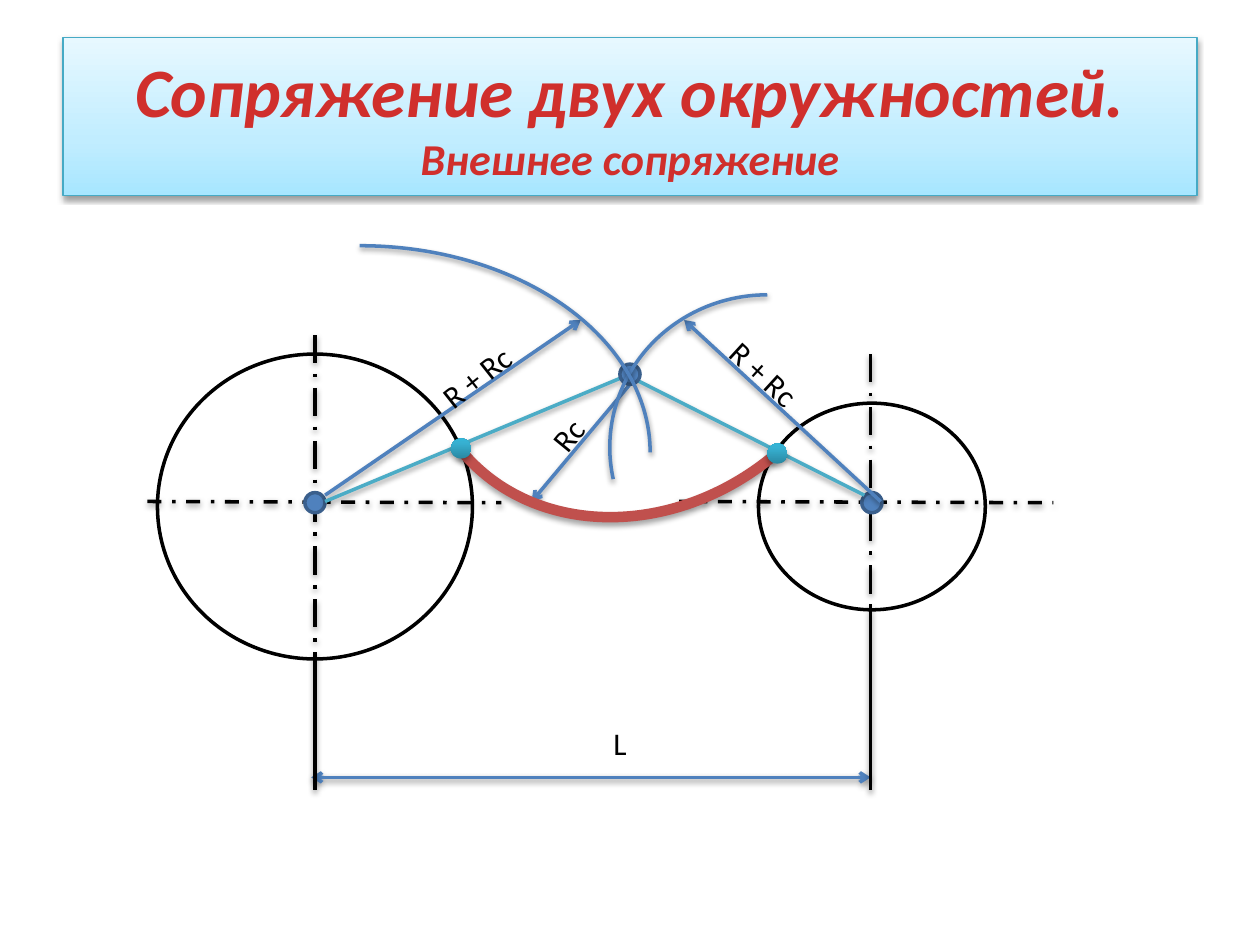
from lxml.etree import SubElement
from pptx import Presentation
from pptx.dml.color import RGBColor as RGB
from pptx.enum.dml import MSO_LINE as Dash
from pptx.enum.shapes import MSO_CONNECTOR as Link, MSO_SHAPE as Kind
from pptx.enum.text import MSO_ANCHOR as Anchor, PP_ALIGN as Align
from pptx.oxml.ns import qn
from pptx.util import Pt

PX = 9144  # 100 px to the inch


class Theme:
    font = "Calibri"
    head, sub, label = 39.6, 25.2, 18
    thin, line, bold = 0.75, 2, 6
    ink, paper, red = "000000", "FFFFFF", "D02F2C"
    blue, navy, teal, brick, edge = "4F81BD", "3A5F8C", "4BACC6", "C0504D", "46AAC5"
    sky = ((0, "A7E6FF"), (35, "C1EDFF"), (100, "E7F8FF"))
    sea = ((0, "2A88A2"), (80, "37B1D2"), (100, "34B4D6"))


def shade(shape, alpha=38, dist=20000):
    """Give the shape a soft shadow straight below it."""
    props = shape.element.spPr
    for old in props.findall(qn("a:effectLst")):
        props.remove(old)
    glow = SubElement(SubElement(props, qn("a:effectLst")), qn("a:outerShdw"),
                      blurRad="40000", dist=str(dist), dir="5400000", rotWithShape="0")
    tone = SubElement(glow, qn("a:srgbClr"), val=Theme.ink)
    SubElement(tone, qn("a:alpha"), val=str(alpha * 1000))


def join(rows):
    """Draw rows of (x1, y1, x2, y2, colour, dash, arrow ends)."""
    for x1, y1, x2, y2, tint, dash, ends in rows:
        link = slide.shapes.add_connector(Link.STRAIGHT, x1 * PX, y1 * PX, x2 * PX, y2 * PX)
        link.line.color.rgb = RGB.from_string(tint)
        link.line.width = Pt(Theme.line)
        if dash:
            link.line.dash_style = dash
        for end in ends:
            SubElement(link.line._get_or_add_ln(), qn("a:" + end), type="arrow")
        shade(link)


deck = Presentation()
deck.slide_width, deck.slide_height = 1000 * PX, 750 * PX
slide = deck.slides.add_slide(deck.slide_layouts[6])

# Title
title = slide.shapes.add_shape(Kind.RECTANGLE, 50 * PX, 30 * PX, 900 * PX, 125 * PX)
title.line.color.rgb = RGB.from_string(Theme.edge)
title.line.width = Pt(Theme.thin)
shade(title)
frame = title.text_frame
frame.word_wrap = True
frame.vertical_anchor = Anchor.MIDDLE
para = frame.paragraphs[0]
para.alignment = Align.CENTER
for text, size in (("Сопряжение двух окружностей.", Theme.head),
                   ("Внешнее сопряжение", Theme.sub)):
    if para.runs:
        para.add_line_break()
    run = para.add_run()
    run.text = text
    run.font.name, run.font.size = Theme.font, Pt(size)
    run.font.bold = run.font.italic = True
    run.font.color.rgb = RGB.from_string(Theme.red)

# Circles, then their axes, then their centres
rings = [(125, 281, 250, 242, Theme.paper, Theme.ink), (602, 320, 180, 164, Theme.paper, Theme.ink)]
hubs = [(x, 391, 16, 16, Theme.blue, Theme.navy) for x in (242, 684)]
apex = [(492, 289, 16, 16, Theme.blue, Theme.navy)]
axes = [
    (117, 398, 398, 399, Theme.ink, Dash.DASH_DOT, ()),
    (250, 266, 250, 523, Theme.ink, Dash.LONG_DASH_DOT, ()),
    (539, 398, 836, 399, Theme.ink, Dash.DASH_DOT, ()),
    (691, 281, 691, 484, Theme.ink, Dash.LONG_DASH_DOT, ()),
]
tip = ("tailEnd",)
rays = [
    (247, 617, 691, 617, Theme.blue, None, ("headEnd", "tailEnd")),
    (258, 393, 461, 254, Theme.blue, None, tip),
    (699, 398, 543, 254, Theme.blue, None, tip),
    (500, 305, 422, 398, Theme.blue, None, tip),
    (258, 398, 500, 297, Theme.teal, None, ()),
    (496, 297, 686, 393, Theme.teal, None, ()),
    (250, 523, 250, 627, Theme.ink, None, ()),
    (691, 484, 691, 627, Theme.ink, None, ()),
]
for discs, lines in ((rings, axes), (hubs, rays), (apex, ())):
    for x, y, w, h, fill, tint in discs:
        disc = slide.shapes.add_shape(Kind.FLOWCHART_CONNECTOR, x * PX, y * PX, w * PX, h * PX)
        disc.shadow.inherit = False
        disc.fill.solid()
        disc.fill.fore_color.rgb = RGB.from_string(fill)
        disc.line.color.rgb = RGB.from_string(tint)
        disc.line.width = Pt(Theme.line)
    join(lines)

# Arcs
for x, y, w, h, turn, start, tint, wide, alpha, dist in (
    (488, 230, 242, 250, 270, 155, Theme.blue, Theme.line, 38, 20000),
    (323, 77, 376, 322, 140.4, 162, Theme.brick, Theme.bold, 35, 23000),
    (55, 195, 461, 328, 0, 162, Theme.blue, Theme.line, 38, 20000),
):
    arc = slide.shapes.add_shape(Kind.ARC, x * PX, y * PX, w * PX, h * PX)
    arc.rotation = turn
    arc.adjustments[0] = start
    arc.fill.background()
    arc.line.color.rgb = RGB.from_string(tint)
    arc.line.width = Pt(wide)
    shade(arc, alpha, dist)

# Points of tangency, and the gradients
faded = [(title, Theme.sky)]
for x, y in ((358, 348), (609, 352)):
    dot = slide.shapes.add_shape(Kind.FLOWCHART_CONNECTOR, x * PX, y * PX, 16 * PX, 16 * PX)
    dot.line.fill.background()
    shade(dot, 35, 23000)
    faded.append((dot, Theme.sea))
for shape, stops in faded:
    shape.fill.gradient()
    shape.fill.gradient_angle = 90
    ramp = shape.element.spPr.find(qn("a:gradFill")).find(qn("a:gsLst"))
    for old in list(ramp):
        ramp.remove(old)
    for spot, tint in stops:
        stop = SubElement(ramp, qn("a:gs"), pos=str(spot * 1000))
        SubElement(stop, qn("a:srgbClr"), val=tint)

# Labels
for text, x, y, w, turn in (
    ("L", 477, 570, 31, 0),
    (" R + Rc", 332, 280, 90, 321.7),
    ("R + Rc", 565, 279, 88, 42.6),
    ("Rc", 425, 318, 63, 309.2),
):
    box = slide.shapes.add_textbox(x * PX, y * PX, w * PX, 40 * PX)
    box.rotation = turn
    box.text_frame.word_wrap = text != "L"
    run = box.text_frame.paragraphs[0].add_run()
    run.text = text
    run.font.name, run.font.size = Theme.font, Pt(Theme.label)
    run.font.color.rgb = RGB.from_string(Theme.ink)

deck.save("out.pptx")
